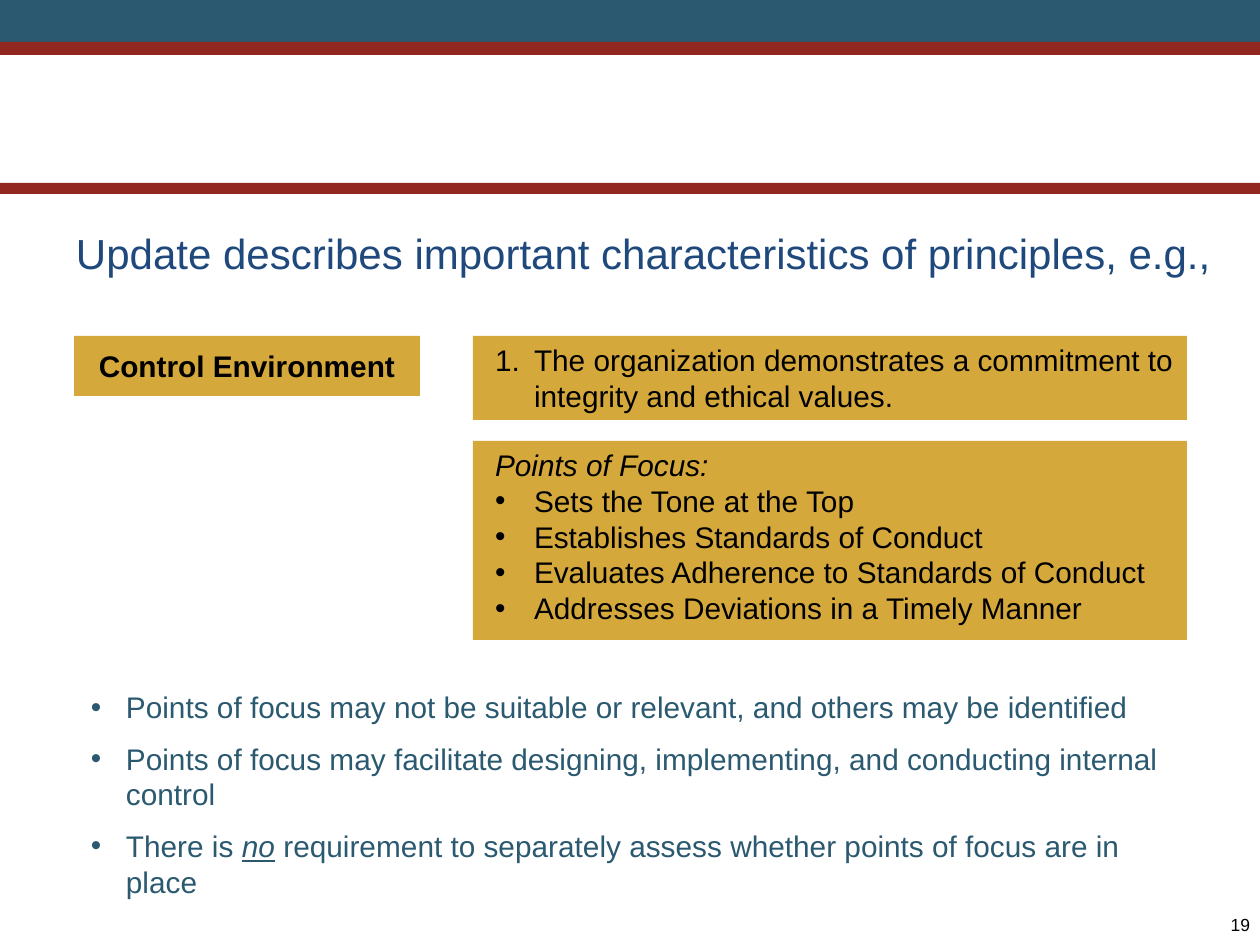
from pptx import Presentation
from pptx.dml.color import RGBColor
from pptx.enum.shapes import MSO_SHAPE
from pptx.enum.text import MSO_ANCHOR, PP_ALIGN
from pptx.util import Emu, Pt
from lxml import etree

RECT = MSO_SHAPE.RECTANGLE
TOP, MIDDLE = MSO_ANCHOR.TOP, MSO_ANCHOR.MIDDLE
LEFT, CENTER, RIGHT = PP_ALIGN.LEFT, PP_ALIGN.CENTER, PP_ALIGN.RIGHT
NS = "http://schemas.openxmlformats.org/drawingml/2006/main"
SCALE = 914400 / 126  # EMU per px
FONT = "Arial"
COLORS = {"teal": "2A5970", "red": "91271F", "gold": "D5A83B",
          "navy": "1F497D", "black": "000000"}

# Content: a paragraph is a list of (text, style) runs
TITLE = [[("Update describes important characteristics of principles, e.g.,", "")]]
COMPONENT = [[("Control Environment", "b")]]
PRINCIPLE = [[("The organization demonstrates a commitment to integrity "
               "and ethical values.", "")]]
FOCUS_HEAD = [("Points of Focus:", "i")]
FOCUS_POINTS = [
    [("Sets the Tone at the Top", "")],
    [("Establishes Standards of Conduct", "")],
    [("Evaluates Adherence to Standards of Conduct", "")],
    [("Addresses Deviations in a Timely Manner", "")],
]
NOTES = [
    [("Points of focus may not be suitable or relevant, and others may be identified", "")],
    [("Points of focus may facilitate designing, implementing, and conducting "
      "internal control", "")],
    [("There is ", ""), ("no", "iu"),
     (" requirement to separately assess whether points of focus are in place", "")],
]
PAGE_NUMBER = [[("19", "")]]

# Layout in px: left, top, width, height
BANDS = [("teal", (0, 0, 1260, 42)), ("red", (0, 42, 1260, 13)),
         ("red", (0, 183, 1260, 11))]
INSET = (13, 6)
BOX_INDENT = (48, -39)
NOTE_INDENT = (50, -35)


def px(n):
    return Emu(round(n * SCALE))


def rgb(name):
    return RGBColor.from_string(COLORS[name])


def add_rect(s, box, color):
    sp = s.shapes.add_shape(RECT, *map(px, box))
    sp.shadow.inherit = False
    sp.fill.solid()
    sp.fill.fore_color.rgb = rgb(color)
    sp.line.fill.background()
    return sp


def add_textbox(s, box):
    return s.shapes.add_textbox(*map(px, box))


def set_bullet(p, indent, bullet):
    pPr = p._p.get_or_add_pPr()
    pPr.set("marL", str(px(indent[0])))
    pPr.set("indent", str(px(indent[1])))
    if bullet == "1.":
        etree.SubElement(pPr, f"{{{NS}}}buFont", typeface="+mj-lt")
        etree.SubElement(pPr, f"{{{NS}}}buAutoNum", type="arabicPeriod")
    elif bullet:
        etree.SubElement(pPr, f"{{{NS}}}buFont", typeface=FONT)
        etree.SubElement(pPr, f"{{{NS}}}buChar", char=bullet)


def write(sp, paragraphs, size=17, color="black", align=LEFT, anchor=TOP,
          inset=INSET, indent=(0, 0), bullets=(), after=0):
    tf = sp.text_frame
    tf.word_wrap = True
    tf.vertical_anchor = anchor
    tf.margin_left = tf.margin_right = px(inset[0])
    tf.margin_top = tf.margin_bottom = px(inset[1])
    for i, runs in enumerate(paragraphs):
        p = tf.paragraphs[0] if i == 0 else tf.add_paragraph()
        set_bullet(p, indent, bullets[i] if bullets else "")
        p.alignment = align
        p.space_after = Pt(after)
        for text, style in runs:
            r = p.add_run()
            r.text = text
            r.font.name, r.font.size = FONT, Pt(size)
            r.font.color.rgb = rgb(color)
            r.font.bold = "b" in style
            r.font.italic = "i" in style
            r.font.underline = "u" in style


def main():
    prs = Presentation()
    prs.slide_width, prs.slide_height = px(1260), px(945)
    s = prs.slides.add_slide(prs.slide_layouts[6])

    # Header bands and page number
    for color, box in BANDS:
        add_rect(s, box, color)
    write(add_textbox(s, (1040, 914, 210, 21)), PAGE_NUMBER, size=10,
          align=RIGHT, inset=(0, 0))

    # Title
    write(add_textbox(s, (63, 179, 1166, 147)), TITLE, size=24, color="navy",
          anchor=MIDDLE)

    # Component, principle and its points of focus
    write(add_rect(s, (74, 336, 346, 60), "gold"), COMPONENT, align=CENTER,
          anchor=MIDDLE, inset=(6, 4), after=2)
    write(add_rect(s, (473, 336, 714, 84), "gold"), PRINCIPLE,
          indent=BOX_INDENT, bullets=["1."])
    write(add_rect(s, (473, 441, 714, 199), "gold"), [FOCUS_HEAD] + FOCUS_POINTS,
          indent=BOX_INDENT, bullets=[""] + ["•"] * len(FOCUS_POINTS))

    # Notes below the boxes
    write(add_textbox(s, (63, 683, 1134, 199)), NOTES, color="teal",
          indent=NOTE_INDENT, bullets=["•"] * len(NOTES), after=9)

    prs.save("out.pptx")


if __name__ == "__main__":
    main()
